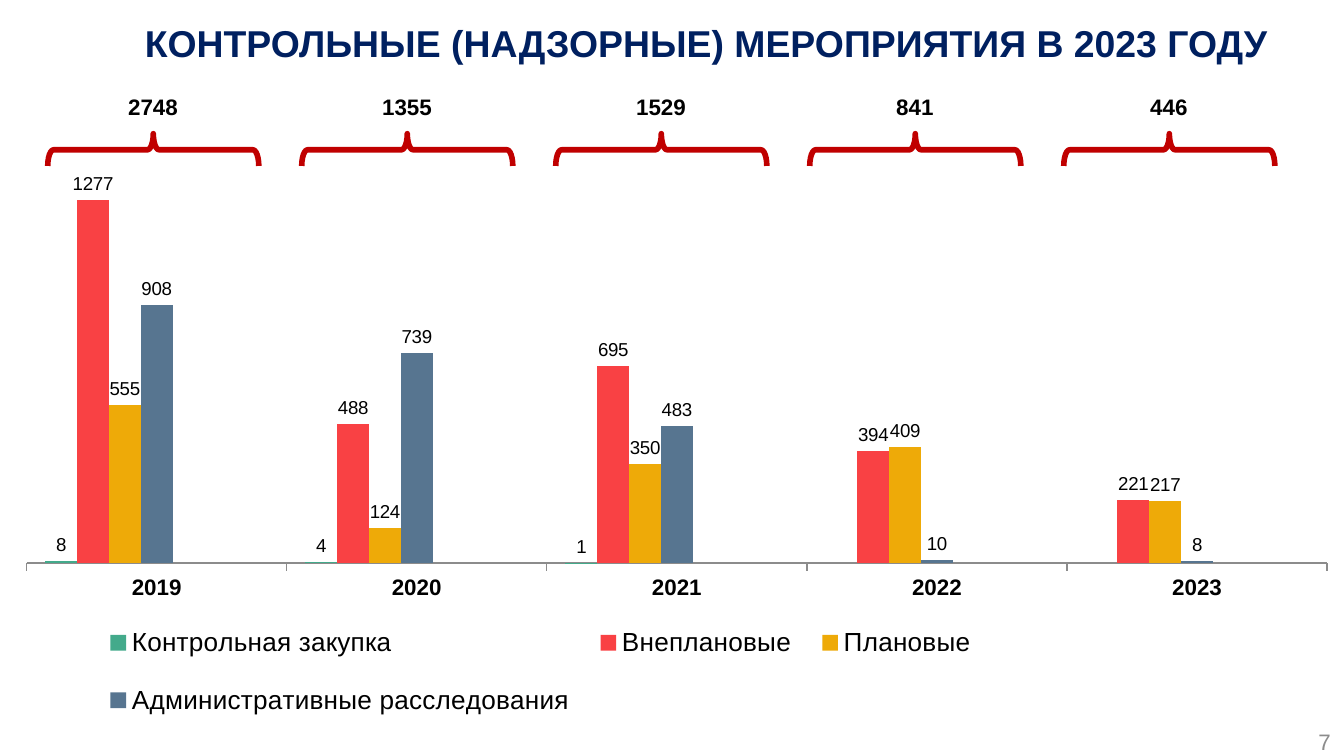
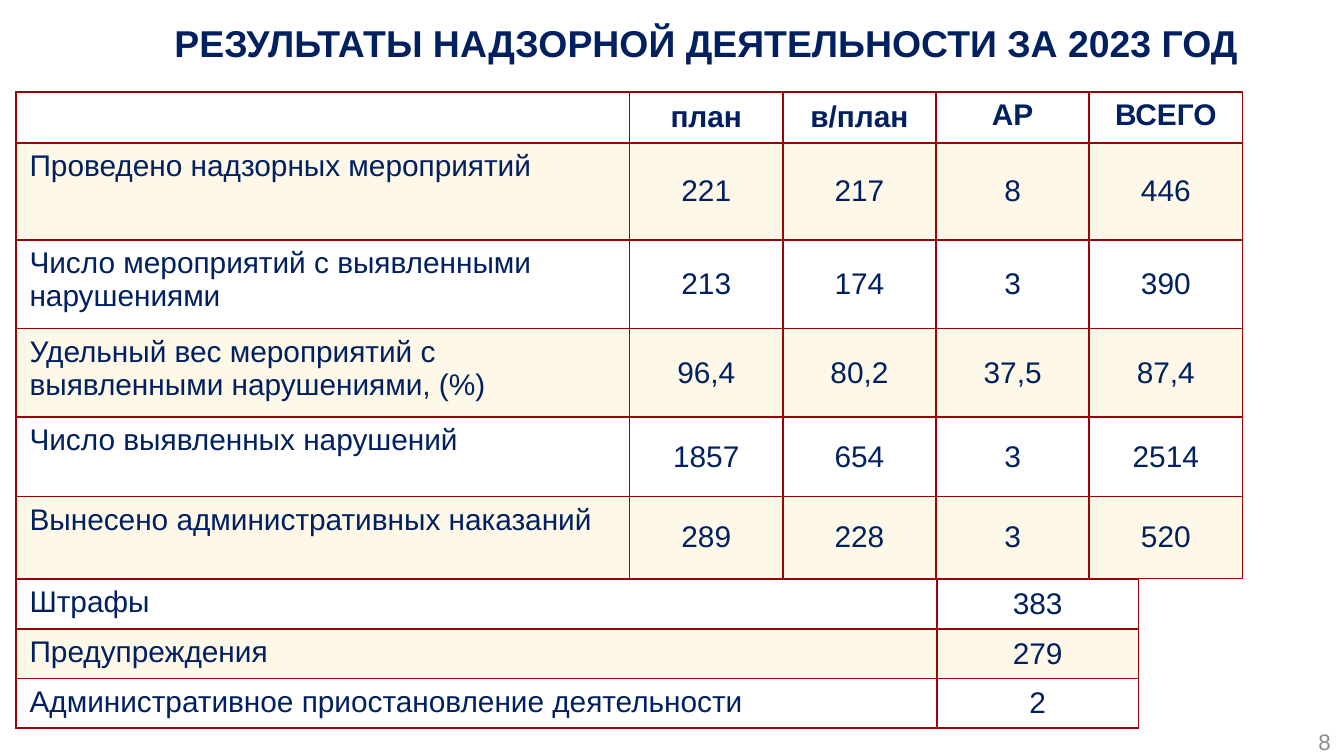
import pptx
import pptx.chart.data
import pptx.dml.color
import pptx.enum.chart
import pptx.enum.shapes
import pptx.enum.text
import pptx.oxml
import pptx.oxml.ns
import pptx.util

RGBColor = pptx.dml.color.RGBColor
Pt = pptx.util.Pt
ALIGN = pptx.enum.text.PP_ALIGN
ANCHOR = pptx.enum.text.MSO_ANCHOR

NAVY = RGBColor(0x00, 0x20, 0x60)
BLACK = RGBColor(0x00, 0x00, 0x00)
GREY = RGBColor(0x8C, 0x8C, 0x8C)
RED = RGBColor(0xC0, 0x00, 0x00)
MAROON = RGBColor(0x98, 0x05, 0x07)
CREAM = RGBColor(0xFB, 0xDD, 0x95)
SERIES_COLORS = [
    RGBColor(0x43, 0xAA, 0x8B),
    RGBColor(0xF9, 0x41, 0x44),
    RGBColor(0xEE, 0xAA, 0x08),
    RGBColor(0x57, 0x75, 0x90),
    RGBColor(0xF3, 0x72, 0x2C),
    RGBColor(0x90, 0xBE, 0x6D),
    RGBColor(0x43, 0xAA, 0x8B),
]
FONT = "Arial"
EMU_PER_PX = 4572  # 200 px to the inch
TITLE_ONLY = 5

YEARS = ["2019", "2020", "2021", "2022", "2023"]
TOTALS = ["2748", "1355", "1529", "841", "446"]
INSPECTIONS = {
    "Контрольная закупка": [8, 4, 1, None, None],
    "Внеплановые": [1277, 488, 695, 394, 221],
    "Плановые": [555, 124, 350, 409, 217],
    "Административные расследования": [908, 739, 483, 10, 8],
    "Series 5": [None] * 5,
    "Series 6": [None] * 5,
    "Series 7": [None] * 5,
}
EMPTY_SERIES = [4, 5, 6]

RESULTS = [
    ["", "план", "в/план", "АР", "ВСЕГО"],
    ["Проведено надзорных мероприятий", "221", "217", "8", "446"],
    ["Число мероприятий с выявленными нарушениями", "213", "174", "3", "390"],
    ["Удельный вес мероприятий с выявленными нарушениями, (%)", "96,4", "80,2", "37,5", "87,4"],
    ["Число выявленных нарушений", "1857", "654", "3", "2514"],
    ["Вынесено административных наказаний", "289", "228", "3", "520"],
]
PENALTIES = [
    ["Штрафы", "383"],
    ["Предупреждения", "279"],
    ["Административное приостановление деятельности", "2"],
]


def px(*lengths):
    return [pptx.util.Emu(length * EMU_PER_PX) for length in lengths]


def xml(tag, content="", **attributes):
    """Make an element in the a: or c: namespace."""
    prefix = tag.split(":")[0]
    listed = "".join(f' {name}="{value}"' for name, value in attributes.items())
    return pptx.oxml.parse_xml(
        f"<{tag} {pptx.oxml.ns.nsdecls(prefix)}{listed}>{content}</{tag}>")


def set_font(font, size, color, bold=False):
    font.name, font.size, font.bold = FONT, Pt(size), bold
    font.color.rgb = color


def manual_layout(left, top, width, height, inner=False):
    """Make a chart layout from percentages of the chart area."""
    parts = '<c:layoutTarget val="inner"/>' if inner else ""
    parts += '<c:xMode val="edge"/><c:yMode val="edge"/>'
    for name, percent in zip("xywh", (left, top, width, height)):
        parts += f'<c:{name} val="{percent / 100}"/>'
    return xml("c:layout", f"<c:manualLayout>{parts}</c:manualLayout>")


def remove_layout(element):
    for layout in element.findall(pptx.oxml.ns.qn("c:layout")):
        element.remove(layout)


class Deck:
    def __init__(self):
        self.presentation = pptx.Presentation()
        self.presentation.slide_width, self.presentation.slide_height = px(2000, 1125)
        self.slide = None

    def new_slide(self, title, number):
        layout = self.presentation.slide_layouts[TITLE_ONLY]
        self.slide = self.presentation.slides.add_slide(layout)
        shape = self.slide.shapes.title
        shape.left, shape.top, shape.width, shape.height = px(102, 0, 1898, 126)
        self.fill_text(shape.text_frame, title, 20, NAVY, True, ALIGN.CENTER)
        self.text(number, (1866, 1083, 134, 42), 12, GREY, align=ALIGN.RIGHT)

    def fill_text(self, frame, text, size, color, bold, align):
        frame.text = text
        frame.vertical_anchor = ANCHOR.MIDDLE
        frame.word_wrap = True
        paragraph = frame.paragraphs[0]
        paragraph.alignment = align
        set_font(paragraph.runs[0].font, size, color, bold)

    def text(self, text, box, size, color, bold=False, align=ALIGN.LEFT):
        frame = self.slide.shapes.add_textbox(*px(*box)).text_frame
        self.fill_text(frame, text, size, color, bold, align)
        return frame

    def total(self, text, center):
        half_width = 21 + 9 * len(text)
        box = (center - half_width, 129, 2 * half_width, 60)
        frame = self.text(text, box, 12, BLACK, True)
        frame.vertical_anchor = ANCHOR.TOP
        frame.word_wrap = False
        frame.auto_size = pptx.enum.text.MSO_AUTO_SIZE.SHAPE_TO_FIT_TEXT

    def brace(self, center):
        """Add a brace that points up."""
        shape = self.slide.shapes.add_shape(
            pptx.enum.shapes.MSO_SHAPE.LEFT_BRACE, *px(center - 24, 66, 48, 314))
        shape.rotation = 90
        shape.adjustments[0] = 0.18
        shape.adjustments[1] = 0.5
        shape.shadow.inherit = False
        shape.fill.background()
        shape.line.color.rgb = RED
        shape.line.width = Pt(3)

    def column_chart(self, box, categories, values, hidden_entries):
        data = pptx.chart.data.CategoryChartData()
        data.categories = categories
        for name, numbers in values.items():
            data.add_series(name, numbers)
        chart = self.slide.shapes.add_chart(
            pptx.enum.chart.XL_CHART_TYPE.COLUMN_CLUSTERED, *px(*box), data).chart
        chart.has_title = False
        set_font(chart.font, 18, BLACK)
        self.format_series(chart.plots[0])
        self.format_axes(chart)
        plot_area = chart.plots[0]._element.getparent()
        remove_layout(plot_area)
        plot_area.insert(0, manual_layout(0.8, 7.6, 99.2, 62.6, inner=True))
        self.format_legend(chart, hidden_entries)

    def format_series(self, plot):
        plot.gap_width = 117
        plot.overlap = 0
        plot.vary_by_categories = False
        for series, color in zip(plot.series, SERIES_COLORS):
            series.format.fill.solid()
            series.format.fill.fore_color.rgb = color
            series.invert_if_negative = False
            labels = series.data_labels
            labels.show_value = True
            labels.position = pptx.enum.chart.XL_LABEL_POSITION.OUTSIDE_END
            set_font(labels.font, 10, BLACK)

    def format_axes(self, chart):
        value_axis = chart.value_axis
        value_axis.visible = False
        value_axis.has_major_gridlines = False
        value_axis.minimum_scale, value_axis.maximum_scale = 0, 1400
        category_axis = chart.category_axis
        category_axis.major_tick_mark = pptx.enum.chart.XL_TICK_MARK.OUTSIDE
        category_axis.format.line.color.rgb = GREY
        set_font(category_axis.tick_labels.font, 12, BLACK, True)

    def format_legend(self, chart, hidden_entries):
        chart.has_legend = True
        legend = chart.legend
        legend.position = pptx.enum.chart.XL_LEGEND_POSITION.BOTTOM
        legend.include_in_layout = False
        set_font(legend.font, 14, BLACK)
        remove_layout(legend._element)
        position = legend._element.find(pptx.oxml.ns.qn("c:legendPos"))
        position.addnext(manual_layout(5.5, 76, 69, 22.5))
        for index in reversed(hidden_entries):
            position.addnext(xml(
                "c:legendEntry", f'<c:idx val="{index}"/><c:delete val="1"/>'))

    def table(self, left, top, column_widths, row_heights, rows, has_header=False):
        """Add a bordered table with every second row tinted."""
        table = self.slide.shapes.add_table(
            len(rows), len(column_widths),
            *px(left, top, sum(column_widths), sum(row_heights))).table
        table.first_row = table.horz_banding = False
        for column, width in zip(table.columns, px(*column_widths)):
            column.width = width
        for row, height in zip(table.rows, px(*row_heights)):
            row.height = height
        for row_index, texts in enumerate(rows):
            header = has_header and row_index == 0
            for column_index, text in enumerate(texts):
                cell = table.cell(row_index, column_index)
                self.cell_text(cell, text, column_index, header)
                self.cell_borders(cell)
                self.cell_fill(cell, tinted=row_index % 2 == 1)

    def cell_text(self, cell, text, column_index, header):
        cell.text = text
        at_top = column_index == 0 or (header and column_index > 2)
        cell.vertical_anchor = ANCHOR.TOP if at_top else ANCHOR.MIDDLE
        paragraph = cell.text_frame.paragraphs[0]
        paragraph.alignment = ALIGN.CENTER if column_index else ALIGN.LEFT
        for run in paragraph.runs:
            set_font(run.font, 16, NAVY, header)
        if not text:
            paragraph._p.append(xml("a:endParaRPr", sz=1600))

    def cell_borders(self, cell):
        properties = cell._tc.get_or_add_tcPr()
        line = f'<a:solidFill><a:srgbClr val="{MAROON}"/></a:solidFill>'
        for side in "LRTB":
            properties.append(xml(f"a:ln{side}", line, w=Pt(1)))

    def cell_fill(self, cell, tinted):
        if not tinted:
            cell.fill.background()
            return
        cell.fill.solid()
        cell.fill.fore_color.rgb = CREAM
        color = cell._tc.tcPr.find(pptx.oxml.ns.qn("a:solidFill"))[0]
        color.append(xml("a:alpha", val=20000))


def main():
    deck = Deck()

    deck.new_slide("КОНТРОЛЬНЫЕ (НАДЗОРНЫЕ) МЕРОПРИЯТИЯ В 2023 ГОДУ", "7")
    deck.column_chart((24, 174, 1952, 946), YEARS, INSPECTIONS, EMPTY_SERIES)
    for index, total in enumerate(TOTALS):
        center = 228 + 378 * index
        deck.brace(center)
        deck.total(total, center)

    deck.new_slide("РЕЗУЛЬТАТЫ НАДЗОРНОЙ ДЕЯТЕЛЬНОСТИ ЗА 2023 ГОД", "8")
    deck.table(24, 862, [1370, 300], [74] * 3, PENALTIES)
    deck.table(24, 137, [913] + [228] * 4, [76, 144, 132, 132, 118, 122], RESULTS, has_header=True)

    deck.presentation.save("out.pptx")


if __name__ == "__main__":
    main()
